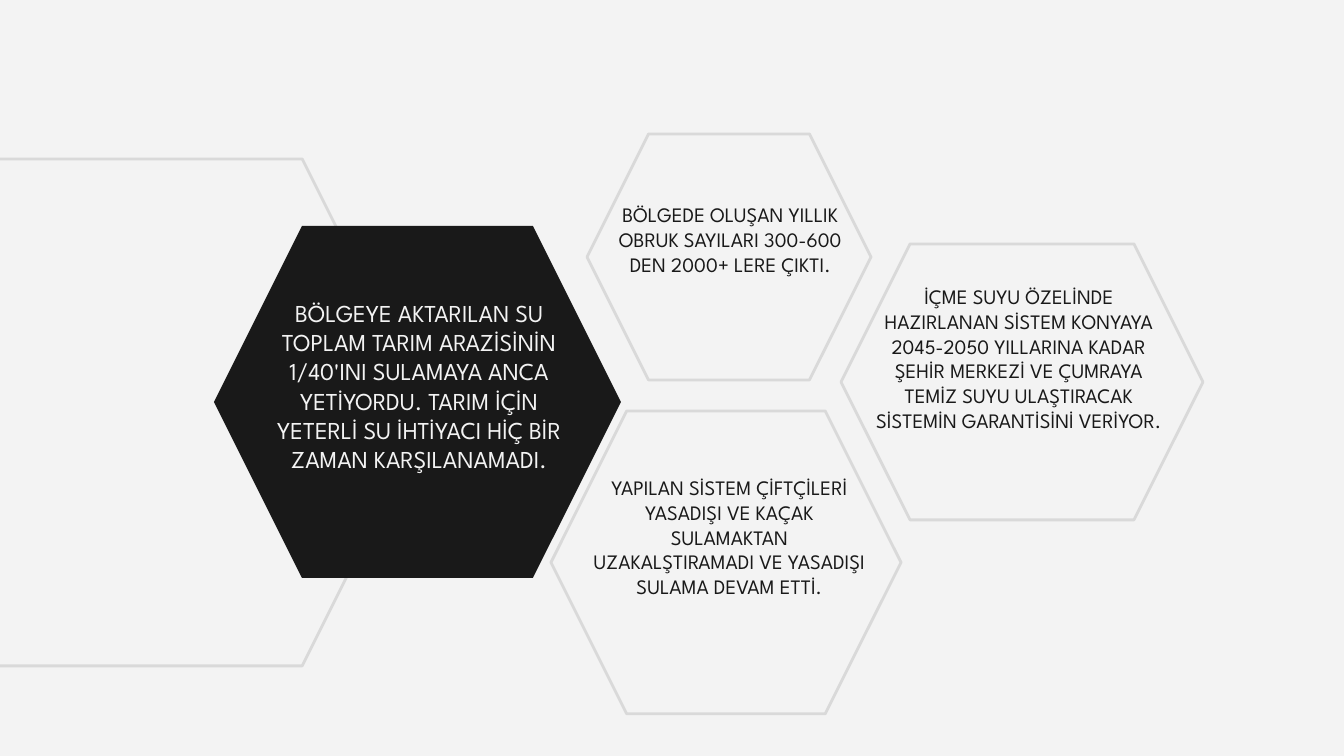
from pptx import Presentation
from pptx.dml.color import RGBColor
from pptx.enum.shapes import MSO_SHAPE
from pptx.enum.text import MSO_ANCHOR, PP_ALIGN
from pptx.util import Emu, Inches, Pt

HEXAGON = MSO_SHAPE.HEXAGON
TOP = MSO_ANCHOR.TOP
CENTER = PP_ALIGN.CENTER

FONT = "League Spartan"
COLORS = {"paper": "F3F3F3", "ink": "191919", "outline": "D9D9D9"}
SLIDE_SIZE = (1344, 756)
EMU_PER_PX = 914400 / 134.4

# Boxes are left, top, width, height in px, listed from back to front.
BACKDROP = (-156, 159, 585, 507)
CELLS = [
    {"hexagon": (214, 226, 407, 352), "fill": "ink", "line": None,
     "text_box": (253, 285, 332, 247), "size": 13, "color": "paper",
     "text": "BÖLGEYE AKTARILAN SU TOPLAM TARIM ARAZİSİNİN 1/40'INI SULAMAYA ANCA "
             "YETİYORDU. TARIM İÇİN YETERLİ SU İHTİYACI HİÇ BİR ZAMAN KARŞILANAMADI."},
    {"hexagon": (587, 134, 284, 246), "fill": "paper", "line": "outline",
     "text_box": (598, 189, 265, 110), "size": 11, "color": "ink",
     "text": "BÖLGEDE OLUŞAN YILLIK OBRUK SAYILARI 300-600 DEN 2000+ LERE ÇIKTI."},
    {"hexagon": (551, 411, 350, 303), "fill": "paper", "line": "outline",
     "text_box": (575, 462, 309, 203), "size": 11, "color": "ink",
     "text": "YAPILAN SİSTEM ÇİFTÇİLERİ YASADIŞI VE KAÇAK SULAMAKTAN "
             "UZAKALŞTIRAMADI VE YASADIŞI SULAMA DEVAM ETTİ."},
    {"hexagon": (841, 244, 362, 276), "fill": "paper", "line": "outline",
     "text_box": (861, 271, 316, 262), "size": 11, "color": "ink",
     "text": "İÇME SUYU ÖZELİNDE HAZIRLANAN SİSTEM KONYAYA 2045-2050 YILLARINA KADAR "
             "ŞEHİR MERKEZİ VE ÇUMRAYA TEMİZ SUYU ULAŞTIRACAK SİSTEMİN GARANTİSİNİ VERİYOR."},
]


def to_emu(lengths):
    return [Emu(round(length * EMU_PER_PX)) for length in lengths]


def rgb(name):
    return RGBColor.from_string(COLORS[name])


def add_hexagon(slide, box, fill, line):
    shape = slide.shapes.add_shape(HEXAGON, *to_emu(box))
    shape.shadow.inherit = False
    if fill:
        shape.fill.solid()
        shape.fill.fore_color.rgb = rgb(fill)
    else:
        shape.fill.background()
    if line:
        shape.line.color.rgb = rgb(line)
        shape.line.width = Pt(1.5)
    else:
        shape.line.fill.background()


def add_text(slide, box, text, size, color):
    frame = slide.shapes.add_textbox(*to_emu(box)).text_frame
    frame.word_wrap = True
    frame.vertical_anchor = TOP
    frame.margin_left = frame.margin_right = Inches(0.1)
    frame.margin_top = frame.margin_bottom = Inches(0.1)
    paragraph = frame.paragraphs[0]
    paragraph.alignment = CENTER
    run = paragraph.add_run()
    run.text = text
    run.font.name = FONT
    run.font.size = Pt(size)
    run.font.color.rgb = rgb(color)


def main():
    presentation = Presentation()
    presentation.slide_width, presentation.slide_height = to_emu(SLIDE_SIZE)
    slide = presentation.slides.add_slide(presentation.slide_layouts[6])
    slide.background.fill.solid()
    slide.background.fill.fore_color.rgb = rgb("paper")

    add_hexagon(slide, BACKDROP, None, "outline")
    for cell in CELLS:
        add_hexagon(slide, cell["hexagon"], cell["fill"], cell["line"])
        add_text(slide, cell["text_box"], cell["text"], cell["size"], cell["color"])

    presentation.save("out.pptx")


if __name__ == "__main__":
    main()
